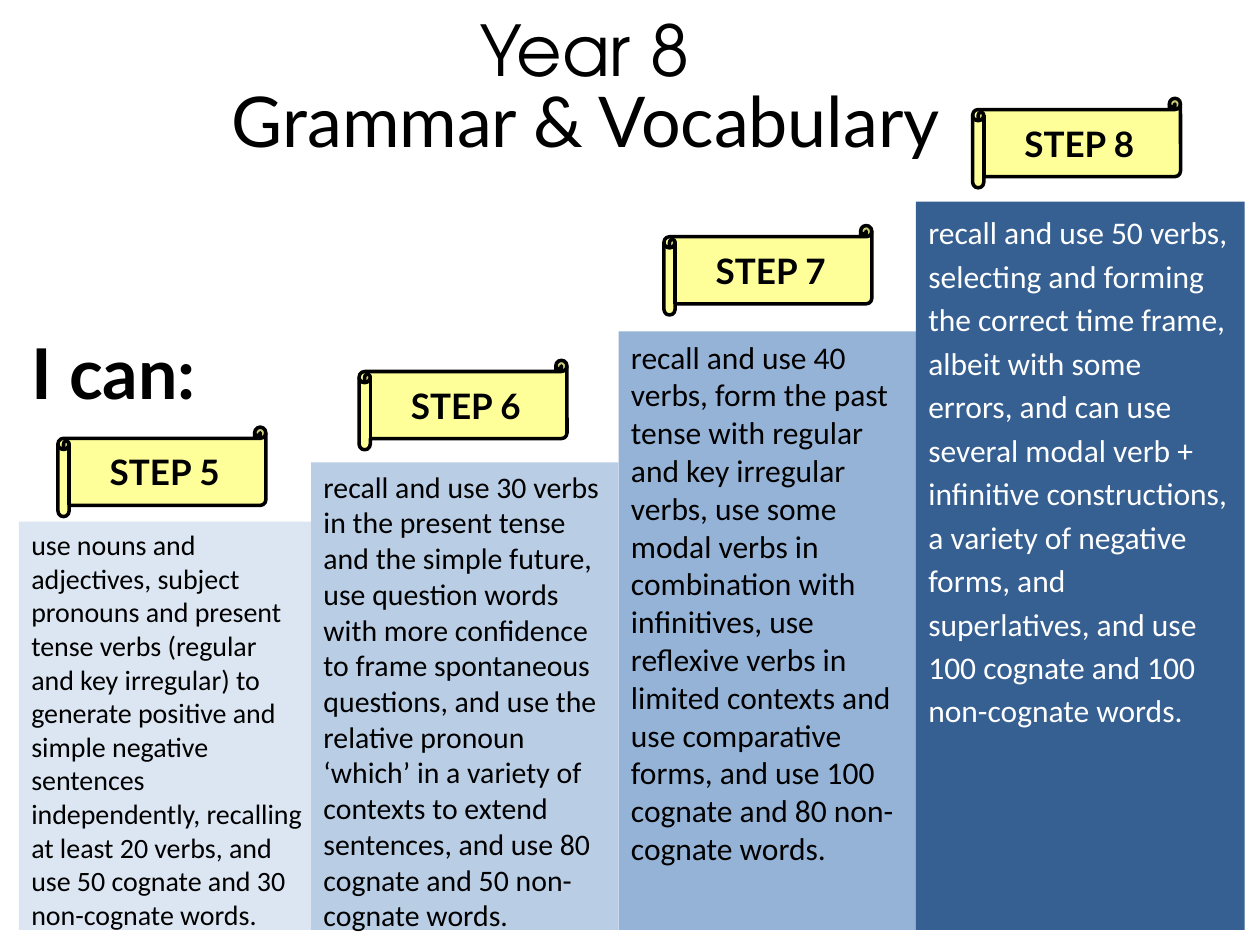
from pptx import Presentation
from pptx.dml.color import RGBColor
from pptx.enum.shapes import MSO_SHAPE
from pptx.enum.text import MSO_ANCHOR, MSO_AUTO_SIZE, PP_ALIGN
from pptx.util import Pt

BOTTOM = 531.4
SCROLL_W, SCROLL_H = 118.8, 51.1
STEPS = [
    ("STEP 5", (10.8, 298.1, 169.9), "DCE6F2", (33.1, 244.1), 16, "000000", None,
     "use nouns and adjectives, subject pronouns and present tense verbs "
     "(regular and key irregular) to generate positive and simple negative "
     "sentences independently, recalling at least 20 verbs, and use 50 "
     "cognate and 30 non-cognate words."),
    ("STEP 6", (177.8, 264.2, 175.7), "B9CDE5", (205.2, 205.9), 17, "000000", None,
     "recall and use 30 verbs in the present tense and the simple future, "
     "use question words with more confidence to frame spontaneous questions, "
     "and use the relative pronoun ‘which’ in a variety of contexts to extend "
     "sentences, and use 80 cognate and 50 non-cognate words."),
    ("STEP 7", (353.5, 189.4, 169.9), "95B3D7", (379.4, 128.9), 18, "000000", None,
     "recall and use 40 verbs, form the past tense with regular and key "
     "irregular verbs, use some modal verbs in combination with infinitives, "
     "use reflexive verbs in limited contexts and use comparative forms, "
     "and use 100 cognate and 80 non-cognate words."),
    ("STEP 8", (523.4, 115.2, 187.9), "376092", (555.8, 56.2), 18, "FFFFFF", 1.15,
     "recall and use 50 verbs, selecting and forming the correct time frame, "
     "albeit with some errors, and can use several modal verb + infinitive "
     "constructions, a variety of negative forms, and superlatives, "
     "and use 100 cognate and 100 non-cognate words."),
]


def rgb(value):
    return RGBColor.from_string(value)


class Deck:
    heading_font = "Lato"
    body_font = "Calibri"
    ink = "000000"
    scroll_fill = "FFFF99"

    def __init__(self, slide):
        self.s = slide

    def set_text(self, sp, text, size, font, color=ink, bold=False,
                 align=PP_ALIGN.LEFT, anchor=MSO_ANCHOR.TOP, spacing=None):
        tf = sp.text_frame
        tf.text = text
        tf.word_wrap = True
        tf.auto_size = MSO_AUTO_SIZE.NONE
        tf.vertical_anchor = anchor
        p = tf.paragraphs[0]
        p.alignment = align
        if spacing:
            p.line_spacing = spacing
        r = p.runs[0]
        r.font.size = Pt(size)
        r.font.name = font
        r.font.bold = bold
        r.font.color.rgb = rgb(color)

    def title(self, text, x, y, w, h, font):
        sp = self.s.shapes.title
        sp.left, sp.top, sp.width, sp.height = Pt(x), Pt(y), Pt(w), Pt(h)
        self.set_text(sp, text, 40, font, align=PP_ALIGN.CENTER)

    def heading(self, text, x, y, w, h, **style):
        sp = self.s.shapes.add_textbox(Pt(x), Pt(y), Pt(w), Pt(h))
        self.set_text(sp, text, 40, self.heading_font, **style)

    def shape(self, kind, x, y, w, h, fill):
        sp = self.s.shapes.add_shape(kind, Pt(x), Pt(y), Pt(w), Pt(h))
        sp.shadow.inherit = False
        sp.fill.solid()
        sp.fill.fore_color.rgb = rgb(fill)
        return sp

    def column(self, text, x, y, w, fill, size, color, spacing):
        sp = self.shape(MSO_SHAPE.RECTANGLE, x, y, w, BOTTOM - y, fill)
        sp.line.fill.background()
        self.set_text(sp, text, size, self.body_font, color, spacing=spacing)

    def scroll(self, text, x, y):
        sp = self.shape(MSO_SHAPE.HORIZONTAL_SCROLL, x, y, SCROLL_W, SCROLL_H,
                        self.scroll_fill)
        sp.line.color.rgb = rgb(self.ink)
        sp.line.width = Pt(2)
        self.set_text(sp, text, 20, self.heading_font, bold=True,
                      align=PP_ALIGN.CENTER, anchor=MSO_ANCHOR.MIDDLE)


def main():
    prs = Presentation()
    prs.slide_width, prs.slide_height = Pt(720), Pt(540)
    deck = Deck(prs.slides.add_slide(prs.slide_layouts[5]))
    deck.title("Year 8", 161.3, 0, 345.6, 55.4, "TeX Gyre Adventor")
    deck.heading("Grammar & Vocabulary", 107.3, 41, 455, 55.4,
                 align=PP_ALIGN.CENTER)
    deck.heading("I can:", 10.8, 185, 455, 55.4, bold=True)
    for label, box, fill, corner, size, color, spacing, text in STEPS:
        deck.column(text, *box, fill, size, color, spacing)
        deck.scroll(label, *corner)
    prs.save("out.pptx")


if __name__ == "__main__":
    main()
